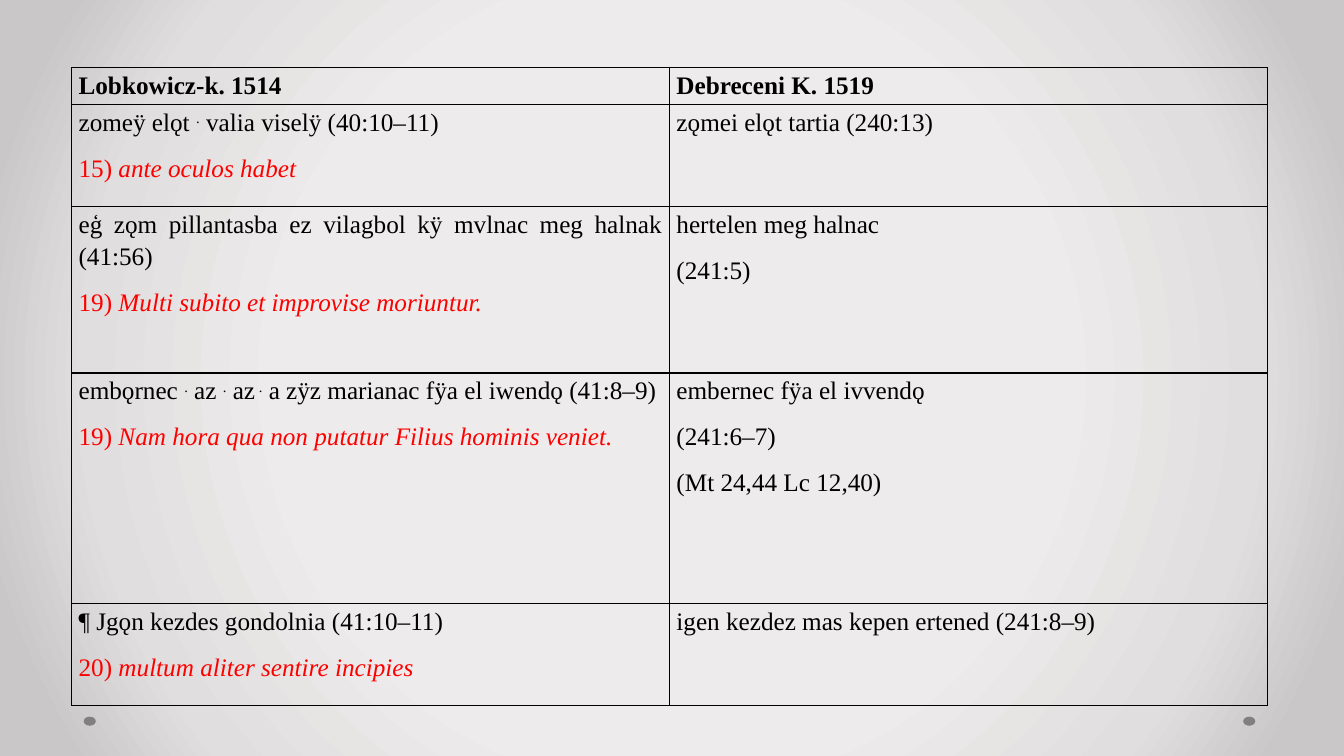
from pptx import Presentation
from pptx.dml.color import RGBColor
from pptx.enum.shapes import MSO_SHAPE as Shape
from pptx.enum.text import PP_ALIGN as Align
from pptx.oxml import parse_xml
from pptx.oxml.ns import nsdecls, qn
from pptx.util import Inches, Pt

COLORS = {"text": "000000", "latin": "FF0000", "border": "000000", "dot": "808080"}
GLOW_STOPS = {50: "EDEBEB", 76: "E0DEDE", 92: "C9C7C7"}
ROW_HEIGHTS = [0.37, 1.01, 1.65, 2.29, 1.01]
COLUMN_WIDTH = 5.93

# Each cell lists its paragraphs; parts between bars are raised points,
# and a pair holds a Latin line's number and its wording.
PASSAGES = [
    [["Lobkowicz-k. 1514"], ["Debreceni K. 1519"]],
    [["zomeÿ elǫt |.| valia viselÿ (40:10–11)", ("15) ", "ante oculos habet")],
     ["zǫmei elǫt tartia (240:13)"]],
    [["eģ zǫm pillantasba ez vilagbol kÿ mvlnac meg halnak (41:56)",
      ("19) ", "Multi subito et improvise moriuntur.")],
     ["hertelen meg halnac", "(241:5)"]],
    [["embǫrnec |.| az |.| az| .| a zÿz marianac fÿa el iwendǫ (41:8–9)",
      ("19) ", "Nam hora qua non putatur Filius hominis veniet.")],
     ["embernec fÿa el ivvendǫ", "(241:6–7)", "(Mt 24,44 Lc 12,40)"]],
    [["¶ Jgǫn kezdes gondolnia (41:10–11)", ("20) ", "multum aliter sentire incipies")],
     ["igen kezdez mas kepen ertened (241:8–9)"]],
]
CELL_FORMAT = {"margin_left": Inches(0.07), "margin_right": Inches(0.07),
               "margin_top": 0, "margin_bottom": 0}
PARAGRAPH_FORMAT = {"alignment": Align.JUSTIFY, "line_spacing": 1.15, "space_after": Pt(10)}


def add_run(paragraph, text, color, bold=False, italic=False, raised=False):
    run = paragraph.add_run()
    run.text = text
    font_format = {"name": "Times New Roman", "size": Pt(18), "bold": bold, "italic": italic}
    for key, value in font_format.items():
        setattr(run.font, key, value)
    run.font.color.rgb = RGBColor.from_string(COLORS[color])
    if raised:
        run.font._element.set("baseline", "30000")


def add_borders(cell):
    for position, side in enumerate(("lnL", "lnR", "lnT", "lnB")):
        cell._tc.get_or_add_tcPr().insert(position, parse_xml(
            f'<a:{side} {nsdecls("a")} w="12700"><a:solidFill>'
            f'<a:srgbClr val="{COLORS["border"]}"/></a:solidFill></a:{side}>'))


prs = Presentation()
prs.slide_width, prs.slide_height = Inches(13.33), Inches(7.5)
slide = prs.slides.add_slide(prs.slide_layouts[6])

# Radial background
slide.background.fill.gradient()
linear = slide.element.find(".//" + qn("a:gradFill"))
stops = "".join(f'<a:gs pos="{pos * 1000}"><a:srgbClr val="{color}"/></a:gs>'
                for pos, color in GLOW_STOPS.items())
linear.getparent().replace(linear, parse_xml(
    f'<a:gradFill {nsdecls("a")} rotWithShape="1"><a:gsLst>{stops}</a:gsLst>'
    '<a:path path="circle"><a:fillToRect l="50000" t="50000" r="50000" b="50000"/></a:path>'
    '</a:gradFill>'))

# Footer dots
for left in (12.33, 0.83):
    dot = slide.shapes.add_shape(Shape.OVAL, Inches(left), Inches(7.11), Inches(0.12), Inches(0.09))
    dot.shadow.inherit = False
    dot.fill.solid()
    dot.fill.fore_color.rgb = RGBColor.from_string(COLORS["dot"])
    dot.line.fill.background()

# Comparison of the two codices
comparison = slide.shapes.add_table(
    len(PASSAGES), 2, Inches(0.71), Inches(0.67),
    Inches(2 * COLUMN_WIDTH), Inches(sum(ROW_HEIGHTS))).table
comparison.first_row = comparison.horz_banding = False
for column in comparison.columns:
    column.width = Inches(COLUMN_WIDTH)

for row_index, (height, passages) in enumerate(zip(ROW_HEIGHTS, PASSAGES)):
    comparison.rows[row_index].height = Inches(height)
    for column_index, lines in enumerate(passages):
        cell = comparison.cell(row_index, column_index)
        for key, value in CELL_FORMAT.items():
            setattr(cell, key, value)
        cell.fill.background()
        add_borders(cell)
        for line_index, line in enumerate(lines):
            frame = cell.text_frame
            paragraph = frame.add_paragraph() if line_index else frame.paragraphs[0]
            for key, value in PARAGRAPH_FORMAT.items():
                setattr(paragraph, key, value)
            if isinstance(line, tuple):
                number, latin = line
                add_run(paragraph, number, "latin")
                add_run(paragraph, latin, "latin", italic=True)
            else:
                for part_index, part in enumerate(line.split("|")):
                    add_run(paragraph, part, "text", bold=row_index == 0,
                            raised=part_index % 2 == 1)

prs.save("out.pptx")
